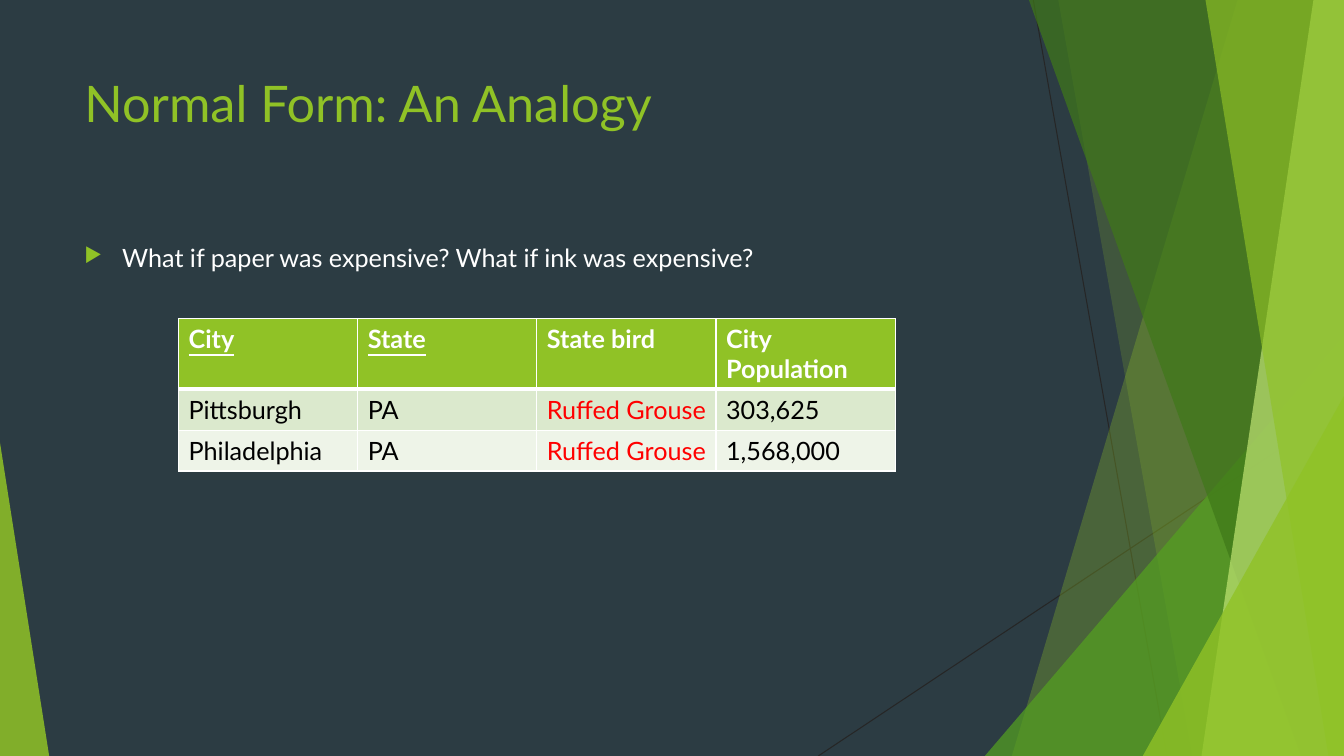
from lxml.etree import SubElement
from pptx import Presentation
from pptx.dml.color import RGBColor
from pptx.enum.shapes import MSO_CONNECTOR, MSO_SHAPE
from pptx.enum.text import MSO_ANCHOR
from pptx.oxml import parse_xml
from pptx.oxml.ns import nsdecls, qn
from pptx.util import Cm, Pt

FONT = "Lato"
COLORS = {
    "background": "2C3C43",
    "line": "262626",
    "lime": "90C226",
    "green": "54A021",
    "forest": "3F7819",
    "pale": "C0E474",
    "white": "FFFFFF",
    "black": "000000",
    "red": "FF0000",
    "band_dark": "DBE9CD",
    "band_light": "EEF4E8",
}
WIDTH, HEIGHT = 33.87, 19.05

RAYS = [(26.04, 0, 29.41, HEIGHT), (WIDTH, 10.24, 20.62, HEIGHT)]
BACK_PANES = [(31.19, 25.5, "lime", 30), (26.67, 30.05, "lime", 20)]
FRONT_PANES = [
    (25.93, 32.79, "forest", 70),
    (33.1, 30.28, "pale", 70),
    (30.38, 33.48, "lime", 65),
]

HEADERS = ["City", "State", "State bird", "City Population"]
KEY_COLUMNS = {"City", "State"}
CITIES = [
    ["Pittsburgh", "PA", "Ruffed Grouse", "303,625"],
    ["Philadelphia", "PA", "Ruffed Grouse", "1,568,000"],
]


def rgb(name):
    return RGBColor.from_string(COLORS[name])


def paint(shape, color, opacity):
    shape.shadow.inherit = False
    shape.fill.solid()
    shape.fill.fore_color.rgb = rgb(color)
    shape.line.fill.background()
    fill_color = shape.fill._xPr.find(qn("a:solidFill"))[0]
    SubElement(fill_color, qn("a:alpha"), val=str(opacity * 1000))


def add_ray(slide, start_x, start_y, end_x, end_y):
    ray = slide.shapes.add_connector(
        MSO_CONNECTOR.STRAIGHT, Cm(start_x), Cm(start_y), Cm(end_x), Cm(end_y))
    ray.line.color.rgb = rgb("line")
    ray.line.width = Pt(0.75)
    SubElement(ray._element.spPr, qn("a:effectLst"))


def add_pane(slide, top_x, bottom_x, color, opacity):
    builder = slide.shapes.build_freeform(Cm(top_x), 0)
    builder.add_line_segments(
        [(Cm(WIDTH), 0), (Cm(WIDTH), Cm(HEIGHT)), (Cm(bottom_x), Cm(HEIGHT))])
    paint(builder.convert_to_shape(), color, opacity)


def add_corner(slide, left, top, width, peak, color, opacity):
    corner = slide.shapes.add_shape(
        MSO_SHAPE.ISOSCELES_TRIANGLE, Cm(left), Cm(top), Cm(width), Cm(HEIGHT - top))
    corner.adjustments[0] = peak
    paint(corner, color, opacity)


def add_backdrop(slide):
    slide.background.fill.solid()
    slide.background.fill.fore_color.rgb = rgb("background")
    for ray in RAYS:
        add_ray(slide, *ray)
    for pane in BACK_PANES:
        add_pane(slide, *pane)
    add_corner(slide, 24.82, 8.46, WIDTH - 24.82, 1, "green", 72)
    for pane in FRONT_PANES:
        add_pane(slide, *pane)
    add_corner(slide, 28.8, 9.98, WIDTH - 28.8, 1, "lime", 80)
    add_corner(slide, 0, 11.15, 1.24, 0, "lime", 85)


def style_text(paragraph, size, color, bold=False, underline=False):
    font = paragraph.font
    font.name = FONT
    font.size = Pt(size)
    font.bold = bold
    font.underline = underline
    font.color.rgb = rgb(color)


def add_text(slide, text, left, top, width, height, size, color):
    box = slide.shapes.add_textbox(Cm(left), Cm(top), Cm(width), Cm(height))
    box.text_frame.word_wrap = True
    box.text_frame.vertical_anchor = MSO_ANCHOR.TOP
    paragraph = box.text_frame.paragraphs[0]
    paragraph.text = text
    style_text(paragraph, size, color)
    return paragraph


def add_bullet(paragraph, indent):
    paragraph.space_before = Pt(10)
    properties = paragraph._p.get_or_add_pPr()
    properties.set("marL", str(Cm(indent)))
    properties.set("indent", str(-Cm(indent)))
    bullet = [
        f'<a:buClr {nsdecls("a")}><a:srgbClr val="{COLORS["lime"]}"/></a:buClr>',
        f'<a:buSzPct {nsdecls("a")} val="80000"/>',
        f'<a:buChar {nsdecls("a")} char="▶"/>',
    ]
    position = list(properties).index(properties.find(qn("a:spcBef"))) + 1
    for offset, xml in enumerate(bullet):
        properties.insert(position + offset, parse_xml(xml))


def add_borders(cell, top, bottom):
    properties = cell._tc.get_or_add_tcPr()
    weights = {"lnL": 1, "lnR": 1, "lnT": top, "lnB": bottom}
    for position, (side, weight) in enumerate(weights.items()):
        properties.insert(position, parse_xml(
            f'<a:{side} {nsdecls("a")} w="{Pt(weight)}"><a:solidFill>'
            f'<a:srgbClr val="{COLORS["white"]}"/></a:solidFill></a:{side}>'))


def fill_cell(cell, text, fill, color, header):
    paragraph = cell.text_frame.paragraphs[0]
    paragraph.text = text
    style_text(paragraph, 18, color, header, header and text in KEY_COLUMNS)
    cell.fill.solid()
    cell.fill.fore_color.rgb = rgb(fill)


def add_city_table(slide, left, top, width, header_height, row_height):
    rows = [HEADERS] + CITIES
    fills = ["lime", "band_dark", "band_light"]
    height = header_height + row_height * len(CITIES)
    table = slide.shapes.add_table(
        len(rows), len(HEADERS), Cm(left), Cm(top), Cm(width), Cm(height)).table
    for column in table.columns:
        column.width = Cm(width / len(HEADERS))
    for index, (row, fill) in enumerate(zip(rows, fills)):
        header = index == 0
        table.rows[index].height = Cm(header_height if header else row_height)
        for column, text in enumerate(row):
            cell = table.cell(index, column)
            body_color = "red" if HEADERS[column] == "State bird" else "black"
            fill_cell(cell, text, fill, "white" if header else body_color, header)
            add_borders(cell, 3 if index == 1 else 1, 3 if header else 1)


def build_slide(presentation):
    slide = presentation.slides.add_slide(presentation.slide_layouts[6])
    add_backdrop(slide)
    add_text(slide, "Normal Form: An Analogy", 1.88, 1.7, 23.88, 3.66, 36, "lime")
    question = add_text(
        slide, "What if paper was expensive? What if ink was expensive?",
        1.88, 5.99, 23.88, 10.77, 18, "white")
    add_bullet(question, 0.95)
    add_city_table(slide, 4.5, 8.03, 18.06, 1.76, 1.03)


def main():
    presentation = Presentation()
    presentation.slide_width = Cm(WIDTH)
    presentation.slide_height = Cm(HEIGHT)
    build_slide(presentation)
    presentation.save("out.pptx")


if __name__ == "__main__":
    main()
